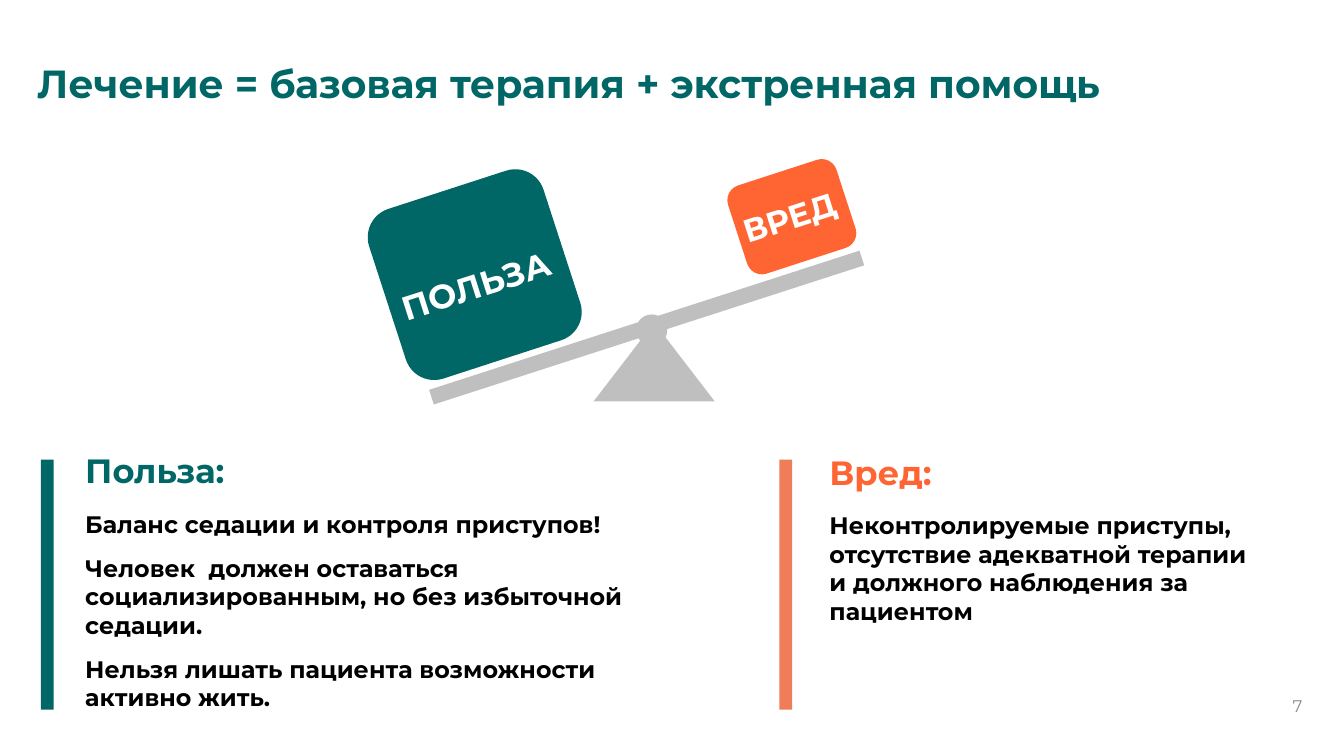
import dataclasses

import lxml.etree
import pptx
import pptx.dml.color
import pptx.enum.shapes
import pptx.enum.text
import pptx.oxml.ns
import pptx.util

Pt = pptx.util.Pt
Align = pptx.enum.text.PP_ALIGN
Anchor = pptx.enum.text.MSO_ANCHOR
Shape = pptx.enum.shapes.MSO_SHAPE


@dataclasses.dataclass(frozen=True)
class Theme:
    font: str = "Montserrat"
    teal: str = "006766"
    orange: str = "FF6433"
    coral: str = "EF7D5A"
    grey: str = "BFBFBF"
    page_grey: str = "8C8C8C"
    white: str = "FFFFFF"
    black: str = "000000"
    title: int = 28
    heading: int = 24
    harm_label: int = 23
    body: int = 17
    page: int = 12
    beam: int = 11


def rgb(value):
    return pptx.dml.color.RGBColor.from_string(value)


def write_text(paragraph, text, *, font, size, color, bold=True, align=Align.LEFT, before=0):
    paragraph.text = text
    paragraph.alignment = align
    paragraph.space_before = Pt(before)
    for style in [paragraph.font, *(run.font for run in paragraph.runs)]:
        style.name = font
        style.size = Pt(size)
        style.bold = bold
        style.color.rgb = rgb(color)


class SlideBuilder:
    def __init__(self, slide, theme):
        self.slide = slide
        self.theme = theme

    def frame(self, holder, anchor=Anchor.TOP, insets=(0, 0, 0, 0)):
        frame = holder.text_frame
        frame.word_wrap = True
        frame.auto_size = pptx.enum.text.MSO_AUTO_SIZE.NONE
        frame.vertical_anchor = anchor
        (frame.margin_left, frame.margin_top,
         frame.margin_right, frame.margin_bottom) = map(Pt, insets)
        return frame

    def title(self, text, left, top, width, height):
        title = self.slide.shapes.title
        title.left, title.top, title.width, title.height = map(Pt, (left, top, width, height))
        write_text(self.frame(title).paragraphs[0], text, font=self.theme.font,
                   size=self.theme.title, color=self.theme.teal)

    def text(self, box, lines, rotation=0, anchor=Anchor.TOP, insets=(0, 0, 0, 0)):
        holder = self.slide.shapes.add_textbox(*map(Pt, box))
        holder.rotation = rotation
        frame = self.frame(holder, anchor, insets)
        for index, (line, style) in enumerate(lines):
            paragraph = frame.add_paragraph() if index else frame.paragraphs[0]
            write_text(paragraph, line, **{"font": self.theme.font, **style})

    def shape(self, kind, box, color, rotation=0):
        shape = self.slide.shapes.add_shape(kind, *map(Pt, box))
        shape.rotation = rotation
        shape.shadow.inherit = False
        shape.fill.solid()
        shape.fill.fore_color.rgb = rgb(color)
        shape.line.fill.background()

    def line(self, start, end, color, width):
        line = self.slide.shapes.add_connector(
            pptx.enum.shapes.MSO_CONNECTOR.STRAIGHT, *map(Pt, (*start, *end)))
        line.line.color.rgb = rgb(color)
        line.line.width = Pt(width)
        lxml.etree.SubElement(line._element.spPr, pptx.oxml.ns.qn("a:effectLst"))

    def weight(self, label, box, label_box, color, size):
        self.shape(Shape.ROUNDED_RECTANGLE, box, color, rotation=342)
        style = dict(size=size, color=self.theme.white, align=Align.CENTER)
        self.text(label_box, [(label, style)], rotation=342.3, anchor=Anchor.MIDDLE)

    def argument(self, heading, statements, box, indent, color, bar_left, bar_color):
        lines = [(heading, dict(size=self.theme.heading, color=color))]
        for index, statement in enumerate(statements):
            lines.append((statement, dict(size=self.theme.body, color=self.theme.black,
                                          before=11 if index else 13.4)))
        self.text(box, lines, insets=(indent, 3.6, 7.2, 3.6))
        self.shape(Shape.RECTANGLE, (bar_left, 328.3, 9, 178.6), bar_color)


def main():
    theme = Theme()
    deck = pptx.Presentation()
    deck.slide_width, deck.slide_height = Pt(960), Pt(540)
    builder = SlideBuilder(deck.slides.add_slide(deck.slide_layouts[5]), theme)

    builder.title("Лечение = базовая терапия + экстренная помощь", 26.6, 42.5, 848, 37.4)

    builder.weight("ВРЕД", (524.9, 121.7, 81.4, 66.2), (523.4, 141.8, 80.6, 25.9),
                   theme.orange, theme.harm_label)
    builder.weight("ПОЛЬЗА", (273.6, 132.5, 131, 127.4), (269.3, 142.6, 141.1, 121.7),
                   theme.teal, theme.heading)
    builder.shape(Shape.ISOSCELES_TRIANGLE, (424.1, 230.4, 86.4, 56.2), theme.grey)
    builder.line((308.2, 283.7), (615.6, 184.3), theme.grey, theme.beam)
    builder.shape(Shape.OVAL, (454.3, 224.6, 22.3, 22.3), theme.grey)

    builder.argument(
        "Польза:",
        ["Баланс седации и контроля приступов!",
         "Человек  должен оставаться социализированным, но без избыточной седации.",
         "Нельзя лишать пациента возможности активно жить."],
        (18.7, 318.2, 478.1, 197.3), 42.2, theme.teal, 29.3, theme.teal)
    builder.argument(
        "Вред:",
        ["Неконтролируемые приступы, отсутствие адекватной терапии\v"
         "и должного наблюдения за\vпациентом"],
        (581, 319, 378, 131.8), 11.5, theme.orange, 556.8, theme.coral)

    page_style = dict(size=theme.page, color=theme.page_grey, bold=False, align=Align.RIGHT)
    builder.text((887.8, 482.4, 42.5, 28.8), [("7", page_style)], anchor=Anchor.BOTTOM)

    deck.save("out.pptx")


if __name__ == "__main__":
    main()
